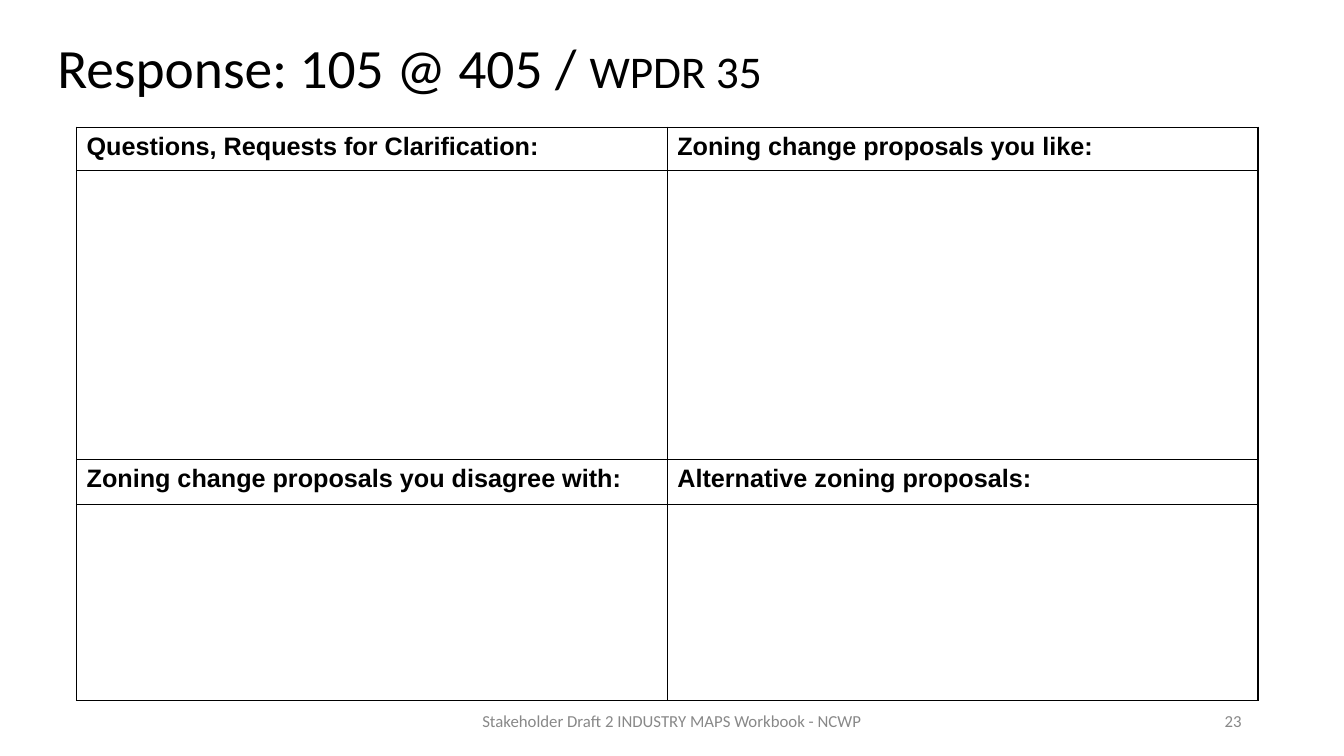
from lxml import etree
from pptx import Presentation
from pptx.dml.color import RGBColor
from pptx.enum.text import MSO_ANCHOR, PP_ALIGN
from pptx.oxml.ns import qn
from pptx.util import Pt

LEFT, CENTER, RIGHT = PP_ALIGN.LEFT, PP_ALIGN.CENTER, PP_ALIGN.RIGHT
MIDDLE = MSO_ANCHOR.MIDDLE

COLORS = {"ink": "000000", "footer": "888888"}
INSET_X, INSET_Y = 7.2, 3.6
COLUMN_WIDTHS = [421.92] * 2
ROW_HEIGHTS = [31.1, 206, 32.5, 139.7]
HEADINGS = {
    0: ["Questions, Requests for Clarification:", "Zoning change proposals you like:"],
    2: ["Zoning change proposals you disagree with:", "Alternative zoning proposals:"],
}


class ResponseSlide:
    def __init__(self, slide):
        self.slide = slide
        self.body_font = "Calibri"
        self.table_font = "Arial"

    def add_run(self, paragraph, text, size, color, font, bold=False):
        run = paragraph.add_run()
        run.text = text
        run.font.size = Pt(size)
        run.font.name = font
        run.font.bold = bold
        run.font.color.rgb = RGBColor.from_string(COLORS[color])

    def text(self, box, runs, color, align=LEFT, line_spacing=1.0):
        """Add one line of text; runs is a list of (text, size)."""
        frame = self.slide.shapes.add_textbox(*map(Pt, box)).text_frame
        frame.word_wrap = True
        frame.vertical_anchor = MIDDLE
        frame.margin_left = frame.margin_right = Pt(INSET_X)
        frame.margin_top = frame.margin_bottom = Pt(INSET_Y)
        paragraph = frame.paragraphs[0]
        paragraph.alignment = align
        paragraph.line_spacing = line_spacing
        for wording, size in runs:
            self.add_run(paragraph, wording, size, color, self.body_font)

    def border(self, cell, width=1):
        properties = cell._tc.get_or_add_tcPr()
        for position, side in enumerate(("a:lnL", "a:lnR", "a:lnT", "a:lnB")):
            line = etree.Element(qn(side), w=str(Pt(width)))
            fill = etree.SubElement(line, qn("a:solidFill"))
            etree.SubElement(fill, qn("a:srgbClr"), val=COLORS["ink"])
            properties.insert(position, line)

    def table(self, left, top, column_widths, row_heights, headings):
        """Add a bordered grid; headings maps a row index to its cell texts."""
        grid = self.slide.shapes.add_table(
            len(row_heights), len(column_widths), Pt(left), Pt(top),
            Pt(sum(column_widths)), Pt(sum(row_heights))).table
        grid.first_row = grid.horz_banding = False
        for column, width in zip(grid.columns, column_widths):
            column.width = Pt(width)
        for row_index, (row, height) in enumerate(zip(grid.rows, row_heights)):
            row.height = Pt(height)
            for column_index, cell in enumerate(row.cells):
                cell.margin_left = cell.margin_right = Pt(INSET_X)
                cell.margin_top = cell.margin_bottom = Pt(INSET_Y)
                cell.fill.background()
                self.border(cell)
                if row_index in headings:
                    self.add_run(cell.text_frame.paragraphs[0],
                                 headings[row_index][column_index],
                                 18, "ink", self.table_font, bold=True)


def main():
    presentation = Presentation()
    presentation.slide_width, presentation.slide_height = Pt(960), Pt(540)
    response = ResponseSlide(
        presentation.slides.add_slide(presentation.slide_layouts[6]))

    response.text((33.84, 28.8, 860.4, 42.5),
                  [("Response: 105 @ 405 / ", 39.6), ("WPDR 35", 32.4)],
                  "ink", line_spacing=0.9)
    response.text((318, 500.5, 324, 28.8),
                  [("Stakeholder Draft 2 INDUSTRY MAPS Workbook - NCWP", 12)],
                  "footer", CENTER)
    response.text((678, 500.5, 216, 28.8), [("23", 12)], "footer", RIGHT)
    response.table(54.72, 90.9, COLUMN_WIDTHS, ROW_HEIGHTS, HEADINGS)

    presentation.save("out.pptx")


if __name__ == "__main__":
    main()
